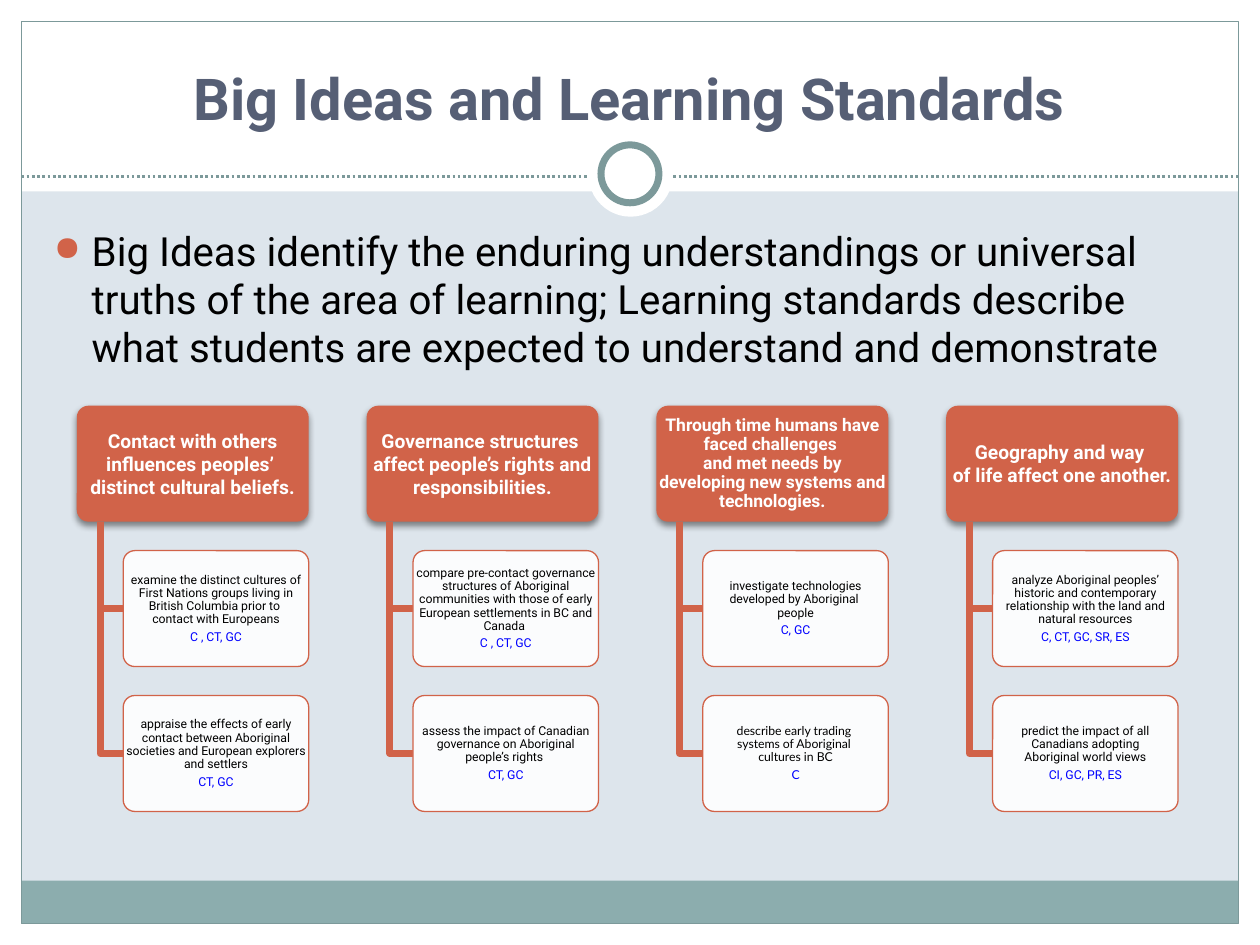
from lxml import etree
from pptx import Presentation
from pptx import util as u
from pptx.dml.color import RGBColor
from pptx.enum import dml, shapes, text
from pptx.oxml.ns import qn

WHITE, BLACK, BLUE = "FFFFFF", "000000", "0000FF"
RUST, SAGE, TEAL, SLATE, MIST = "D16349", "7C999A", "8CADAE", "565F75", "DDE5EC"
SHAPE = shapes.MSO_SHAPE

COLUMNS = [
    (
        ("Contact with others influences peoples’ \ndistinct cultural beliefs.", 11, u.Pt(13.2)),
        [
            ("examine the distinct cultures of First Nations groups living in "
             "British Columbia prior to \ncontact with Europeans", "C , CT, GC", "Roboto"),
            ("appraise the effects of early contact between Aboriginal societies "
             "and European explorers and settlers", "CT, GC", "Roboto"),
        ],
    ),
    (
        ("Governance structures \naffect people’s rights and responsibilities.", 11, u.Pt(13.2)),
        [
            ("compare pre-contact governance structures of Aboriginal communities with "
             "those of early European settlements in BC and Canada ", "C , CT, GC", "Roboto"),
            ("assess the impact of Canadian governance on Aboriginal people’s rights ",
             "CT, GC", "Roboto"),
        ],
    ),
    (
        ("Through time humans have faced challenges \nand met needs by developing "
         "new systems and technologies.", 10, 0.9),
        [
            ("investigate technologies developed by Aboriginal \npeople", "C, GC", "Roboto"),
            ("describe early trading \nsystems of Aboriginal \ncultures in BC", "C", "Lato"),
        ],
    ),
    (
        ("Geography and way \nof life affect one another.", 11, u.Pt(13.2)),
        [
            ("analyze Aboriginal peoples’ historic and contemporary relationship with "
             "the land and natural resources", "C, CT, GC, SR, ES", "Roboto"),
            ("predict the impact of all Canadians adopting\nAboriginal world views",
             "CI, GC, PR, ES", "Roboto"),
        ],
    ),
]


def rgb(value):
    """Turn a hex string into a colour."""
    return RGBColor.from_string(value)


def inches(box):
    """Turn a tuple of numbers into lengths."""
    return [u.Inches(n) for n in box]


def paint(shape, fill=None, line=None, width=0.75):
    """Set the fill and outline of a shape and drop its theme shadow."""
    shape.shadow.inherit = False
    if fill:
        shape.fill.solid()
        shape.fill.fore_color.rgb = rgb(fill)
    else:
        shape.fill.background()
    if line:
        shape.line.color.rgb = rgb(line)
        shape.line.width = u.Pt(width)
    else:
        shape.line.fill.background()


def add_block(slide, kind, box, fill=None, line=None, width=0.75):
    """Add a painted preset shape."""
    block = slide.shapes.add_shape(kind, *inches(box))
    paint(block, fill, line, width)
    return block


def add_card(slide, box, fill, line=None):
    """Add a slightly rounded card."""
    card = add_block(slide, SHAPE.ROUNDED_RECTANGLE, box, fill, line)
    card.adjustments[0] = 0.1
    return card


def add_text_frame(slide, box, anchor, inset=None):
    """Add a wrapping text box and return its frame."""
    frame = slide.shapes.add_textbox(*inches(box)).text_frame
    frame.word_wrap = True
    frame.vertical_anchor = anchor
    if inset is not None:
        frame.margin_left = frame.margin_right = u.Inches(inset)
        frame.margin_top = frame.margin_bottom = u.Inches(inset)
    return frame


def write(paragraph, words, size, color, font="Roboto", bold=False,
          align=text.PP_ALIGN.CENTER, spacing=None, after=0):
    """Fill and format one paragraph, including its line breaks."""
    paragraph.text = words
    paragraph.alignment = align
    paragraph.line_spacing = spacing
    paragraph.space_after = u.Pt(after)
    for run in paragraph.runs:
        run.font.size = u.Pt(size)
        run.font.name = font
        run.font.bold = bold
        run.font.color.rgb = rgb(color)
    for line_break in paragraph._p.findall(qn("a:br")):
        etree.SubElement(line_break, qn("a:rPr"), sz=str(size * 100))


def add_alpha(color_element, percent):
    """Give a colour element an opacity."""
    etree.SubElement(color_element, qn("a:alpha"), val=str(percent * 1000))


def add_soft_shadow(shape):
    """Add a soft shadow below a shape."""
    effects = shape._element.spPr.find(qn("a:effectLst"))
    shadow = etree.SubElement(effects, qn("a:outerShdw"), blurRad=str(u.Pt(4)),
                              dist=str(u.Pt(2)), dir="5400000", rotWithShape="0")
    add_alpha(etree.SubElement(shadow, qn("a:srgbClr"), val=BLACK), 45)


def add_backdrop(slide, width, height):
    """Draw the margins, footer band, frame, dotted divider and ring."""
    slide.background.fill.solid()
    slide.background.fill.fore_color.rgb = rgb(MIST)
    edge = 0.17
    inner = width - 2 * edge
    for margin in [(0, height - edge, width, edge), (0, 0, width, 1.52),
                   (0, 0, edge, height), (width - edge, 0, edge, height)]:
        add_block(slide, SHAPE.RECTANGLE, margin, WHITE)
    add_block(slide, SHAPE.RECTANGLE, (edge, 6.99, inner, 0.34), TEAL)
    add_block(slide, SHAPE.RECTANGLE, (edge, edge, inner, height - 2 * edge), line=SAGE)
    divider = slide.shapes.add_connector(
        shapes.MSO_CONNECTOR.STRAIGHT, *inches((edge, 1.4, width - edge, 1.4)))
    divider.line.color.rgb = rgb(SAGE)
    divider.line.width = u.Pt(1.5)
    divider.line.dash_style = dml.MSO_LINE.ROUND_DOT
    etree.SubElement(divider._element.spPr, qn("a:effectLst"))
    add_block(slide, SHAPE.OVAL, (4.67, 1.05, 0.67, 0.67), WHITE)
    add_block(slide, SHAPE.OVAL, (4.77, 1.15, 0.46, 0.46), WHITE, SAGE, 4)


def add_title(slide, box):
    """Write the slide title."""
    frame = add_text_frame(slide, box, text.MSO_ANCHOR.BOTTOM)
    write(frame.paragraphs[0], "Big Ideas and Learning Standards", 33, SLATE, bold=True)


def add_intro(slide, box):
    """Write the bulleted introduction."""
    intro = add_text_frame(slide, box, text.MSO_ANCHOR.TOP).paragraphs[0]
    layout = intro._p.get_or_add_pPr()
    layout.set("marL", str(u.Inches(0.3)))
    layout.set("indent", str(u.Inches(-0.3)))
    bullet_color = etree.SubElement(layout, qn("a:buClr"))
    etree.SubElement(bullet_color, qn("a:srgbClr"), val=RUST)
    etree.SubElement(layout, qn("a:buSzPct"), val="85000")
    etree.SubElement(layout, qn("a:buChar"), char="●")
    write(intro, "Big Ideas identify the enduring understandings or universal truths of the "
          "area of learning; Learning standards describe what students are expected to "
          "understand and demonstrate", 23, BLACK,
          align=text.PP_ALIGN.LEFT, spacing=u.Pt(27.4))


def add_column(slide, box, idea, standards):
    """Draw one big idea with its learning standards hanging below it."""
    left, top, width, height = box
    words, size, spacing = idea
    add_soft_shadow(add_card(slide, box, RUST))
    frame = add_text_frame(slide, box, text.MSO_ANCHOR.MIDDLE, 0.02)
    write(frame.paragraphs[0], words, size, WHITE, bold=True,
          spacing=spacing, after=size * 0.35)
    stem, indent = left + width * 0.1, width * 0.2
    for row, (standard, competencies, font) in enumerate(standards, 1):
        leaf = (left + indent, top + row * height * 1.25, width - indent, height)
        middle = leaf[1] + height / 2
        start, *bends = [inches(point) for point in
                         [(stem, top + height), (stem, middle), (leaf[0], middle)]]
        branch = slide.shapes.build_freeform(*start)
        branch.add_line_segments(bends, close=False)
        paint(branch.convert_to_shape(), line=RUST, width=4)
        card = add_card(slide, leaf, WHITE, RUST)
        add_alpha(card._element.spPr.find(qn("a:solidFill"))[0], 90)
        frame = add_text_frame(slide, leaf, text.MSO_ANCHOR.MIDDLE, 0.01)
        write(frame.paragraphs[0], standard, 7, BLACK, font, spacing=0.9, after=2.45)
        write(frame.add_paragraph(), competencies, 7, BLUE, font, spacing=0.9, after=2.45)


def main():
    """Build and save the slide."""
    deck = Presentation()
    deck.slide_width, deck.slide_height = inches((10, 7.5))
    slide = deck.slides.add_slide(deck.slide_layouts[6])
    add_backdrop(slide, 10, 7.5)
    add_title(slide, (0.33, 0.27, 9.33, 0.83))
    add_intro(slide, (0.33, 1.75, 9.3, 1.8))
    for index, (idea, standards) in enumerate(COLUMNS):
        add_column(slide, (0.61 + index * 2.3, 3.22, 1.84, 0.92), idea, standards)
    deck.save("out.pptx")


if __name__ == "__main__":
    main()
